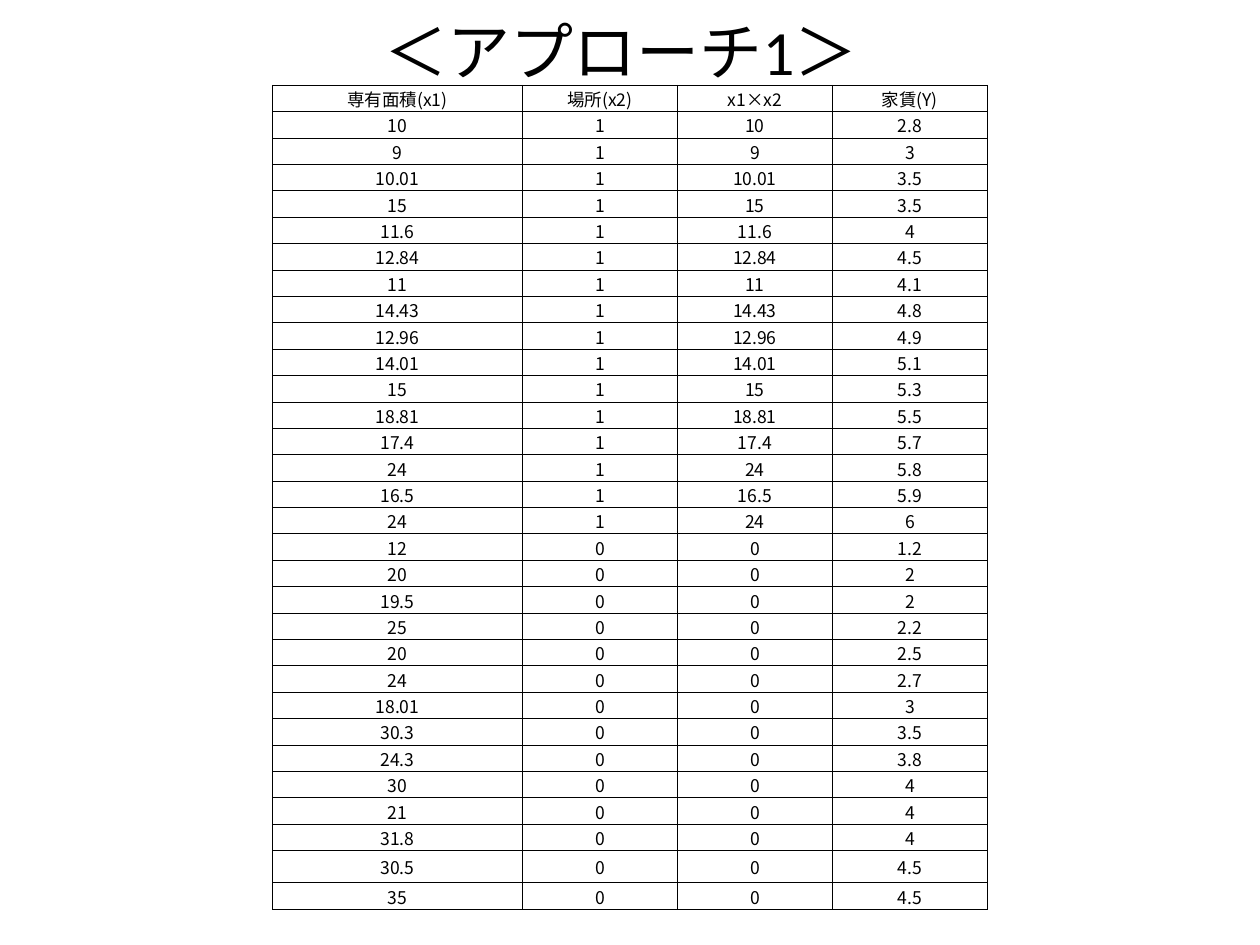
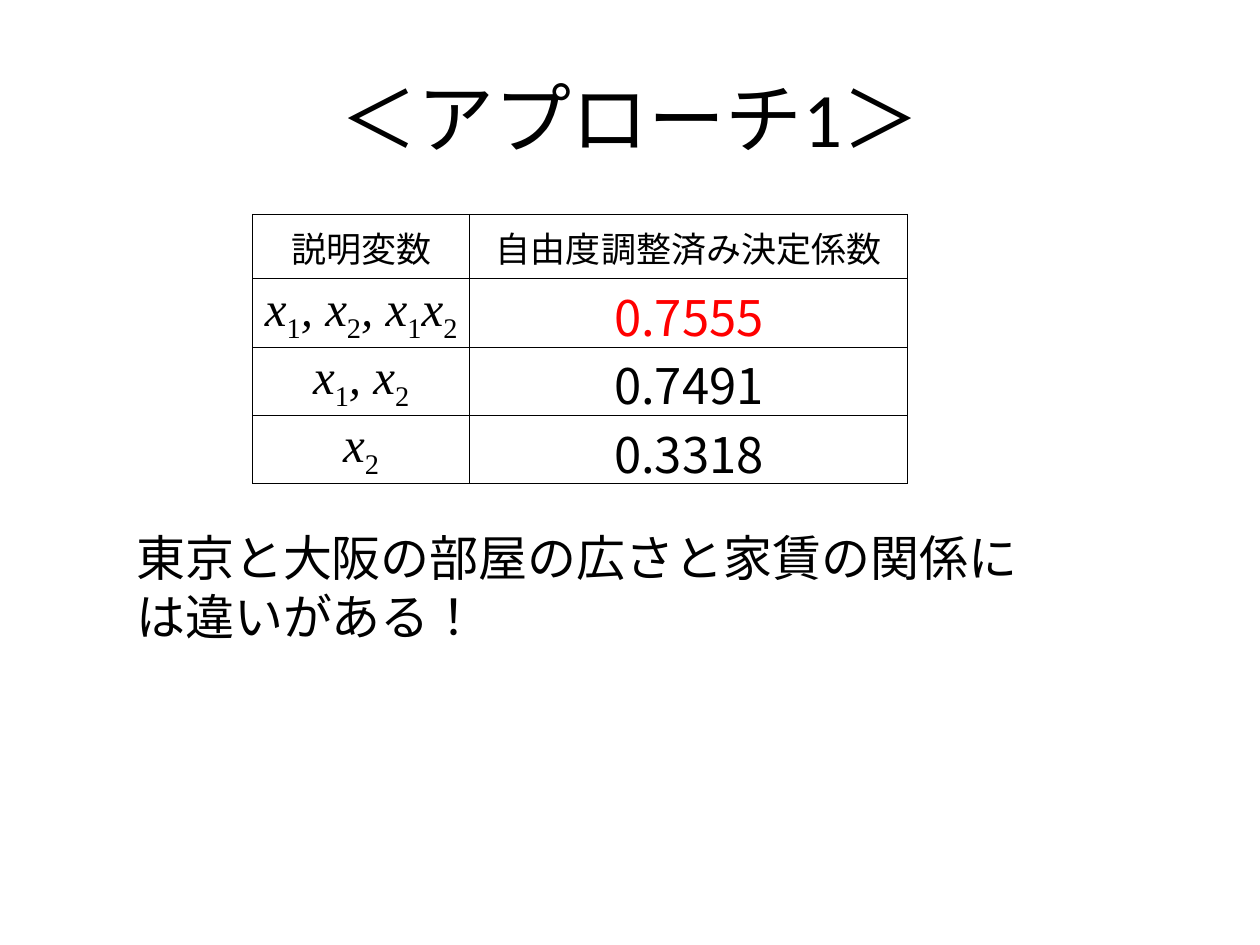
from itertools import groupby

from lxml import etree
from pptx import Presentation
from pptx.dml import color
from pptx.enum import lang, text
from pptx.oxml import ns
from pptx.util import Pt

BLACK = color.RGBColor(0x00, 0x00, 0x00)
RED = color.RGBColor(0xFF, 0x00, 0x00)
BODY_FONT = "Calibri"
TABLE_FONT = "Noto Sans CJK JP"
MATH_FONT = "Times New Roman"
APPROACH = "＜アプローチ1＞"

RENT_HEADINGS = ["専有面積(x1)", "場所(x2)", "x1×x2", "家賃(Y)"]
TOKYO_RENTS = [
    ("10", "2.8"), ("9", "3"), ("10.01", "3.5"), ("15", "3.5"),
    ("11.6", "4"), ("12.84", "4.5"), ("11", "4.1"), ("14.43", "4.8"),
    ("12.96", "4.9"), ("14.01", "5.1"), ("15", "5.3"), ("18.81", "5.5"),
    ("17.4", "5.7"), ("24", "5.8"), ("16.5", "5.9"), ("24", "6"),
]
OSAKA_RENTS = [
    ("12", "1.2"), ("20", "2"), ("19.5", "2"), ("25", "2.2"),
    ("20", "2.5"), ("24", "2.7"), ("18.01", "3"), ("30.3", "3.5"),
    ("24.3", "3.8"), ("30", "4"), ("21", "4"), ("31.8", "4"),
    ("30.5", "4.5"), ("35", "4.5"),
]
FIT_HEADINGS = ["説明変数", "自由度調整済み決定係数"]
FITS = [("x1, x2, x1x2", "0.7555"), ("x1, x2", "0.7491"), ("x2", "0.3318")]


class Deck:
    def __init__(self):
        self.prs = Presentation()
        self.prs.slide_width, self.prs.slide_height = Pt(720), Pt(540)
        self.slide = None

    def new_slide(self):
        self.slide = self.prs.slides.add_slide(self.prs.slide_layouts[6])

    def style(self, run, size, font=BODY_FONT, ink=BLACK):
        run.font.size = Pt(size)
        run.font.name = font
        run.font.color.rgb = ink
        run.font.language_id = lang.MSO_LANGUAGE_ID.JAPANESE

    def words(self, content, left, top, width, height, size):
        frame = self.slide.shapes.add_textbox(
            Pt(left), Pt(top), Pt(width), Pt(height)).text_frame
        frame.word_wrap = True
        frame.text = content
        self.style(frame.paragraphs[0].runs[0], size)
        return frame

    def title(self, left, top, width, height, size):
        frame = self.words(APPROACH, left, top, width, height, size)
        frame.vertical_anchor = text.MSO_ANCHOR.MIDDLE
        frame.paragraphs[0].alignment = text.PP_ALIGN.CENTER

    def table(self, rows, left, top, widths, heights, size):
        grid = self.slide.shapes.add_table(
            len(rows), len(widths), Pt(left), Pt(top),
            Pt(sum(widths)), Pt(sum(heights))).table
        grid.first_row = grid.horz_banding = False
        for column, width in zip(grid.columns, widths):
            column.width = Pt(width)
        for line, height, values in zip(grid.rows, heights, rows):
            line.height = Pt(height)
            for cell, value in zip(line.cells, values):
                self.fill_cell(cell, value, size)
        return grid

    def fill_cell(self, cell, value, size):
        cell.text = value
        cell.vertical_anchor = text.MSO_ANCHOR.MIDDLE
        cell.margin_left = cell.margin_right = cell.margin_top = Pt(0.72)
        cell.margin_bottom = 0
        cell.fill.background()
        self.border(cell)
        paragraph = cell.text_frame.paragraphs[0]
        paragraph.alignment = text.PP_ALIGN.CENTER
        self.style(paragraph.runs[0], size, TABLE_FONT)

    def border(self, cell):
        properties = cell._tc.get_or_add_tcPr()
        for position, side in enumerate(("lnL", "lnR", "lnT", "lnB")):
            edge = etree.Element(ns.qn(f"a:{side}"), w=str(Pt(0.5)))
            paint = etree.SubElement(edge, ns.qn("a:solidFill"))
            etree.SubElement(paint, ns.qn("a:srgbClr"), val=str(BLACK))
            properties.insert(position, edge)

    def formula(self, cell, expression, size):
        paragraph = cell.text_frame.paragraphs[0]
        paragraph.text = ""
        for is_index, letters in groupby(expression, str.isdigit):
            run = paragraph.add_run()
            run.text = "".join(letters)
            self.style(run, size, MATH_FONT)
            run.font.italic = not is_index
            if is_index:
                run._r.get_or_add_rPr().set("baseline", "-25000")


def rent_slide(deck):
    deck.new_slide()
    deck.title(31, 0, 648, 57, 36)
    rows = [RENT_HEADINGS]
    rows += [(area, "1", area, rent) for area, rent in TOKYO_RENTS]
    rows += [(area, "0", "0", rent) for area, rent in OSAKA_RENTS]
    heights = [15.1] * len(rows)
    heights[-2] = 18.5
    deck.table(rows, 155.7, 48.7, [142.8] + [88.6] * 3, heights, 10)


def fit_slide(deck):
    deck.new_slide()
    deck.title(36, 21.6, 648, 90, 44)
    rows = [FIT_HEADINGS] + FITS
    fits = deck.table(rows, 144.4, 122.4, [124, 250.4], [36.9] * len(rows), 20)
    for number, (variables, _) in enumerate(FITS, 1):
        deck.formula(fits.cell(number, 0), variables, 28)
        coefficient = fits.cell(number, 1).text_frame.paragraphs[0].runs[0]
        deck.style(coefficient, 28, TABLE_FONT, RED if number == 1 else BLACK)
    deck.words("東京と大阪の部屋の広さと家賃の関係には違いがある！",
               70.8, 298, 544.3, 75, 28)


def main():
    deck = Deck()
    rent_slide(deck)
    fit_slide(deck)
    deck.prs.save("out.pptx")


if __name__ == "__main__":
    main()
